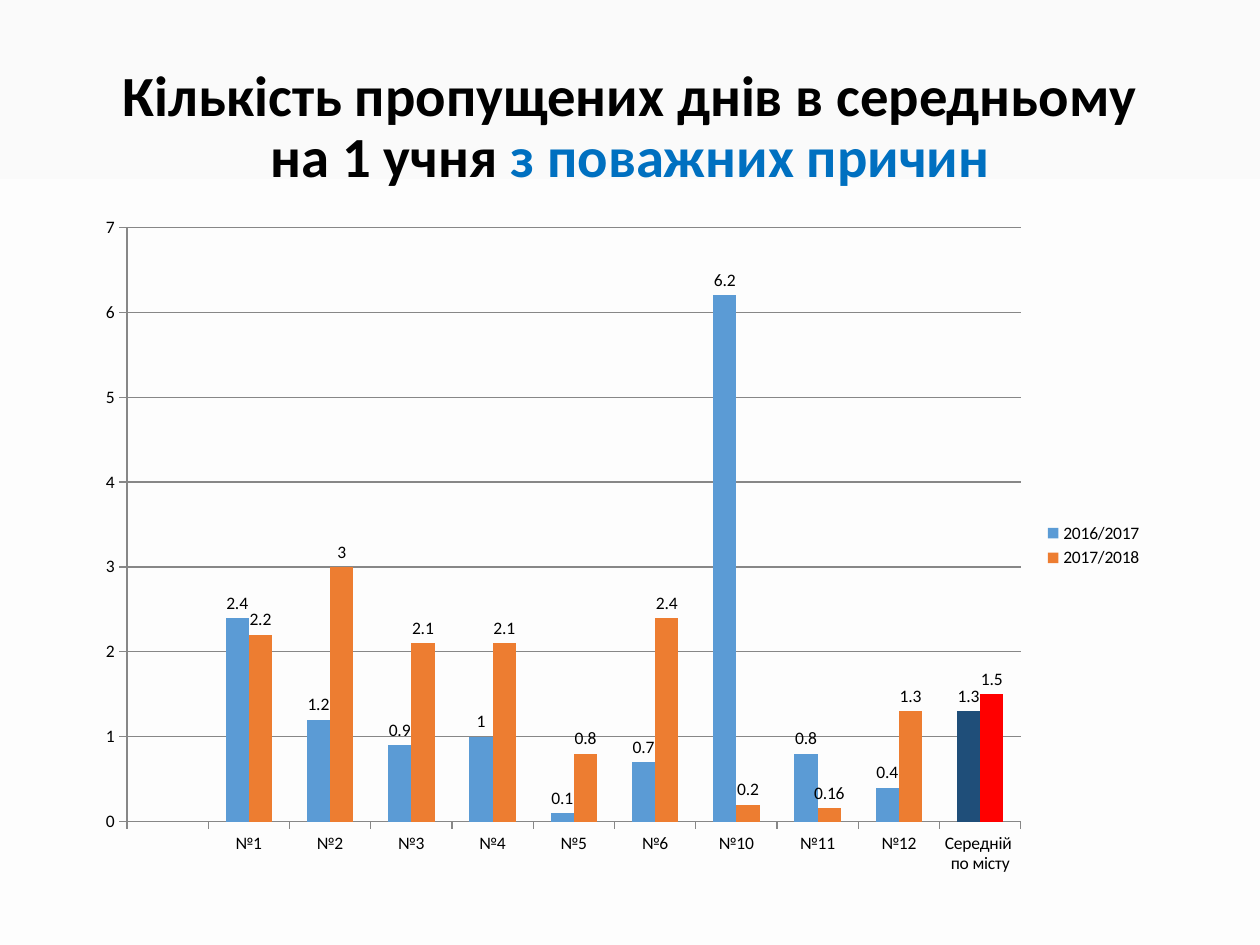
"""Build a slide charting days missed per pupil for valid reasons, by school."""
from lxml import etree
from pptx import Presentation
from pptx.chart.data import CategoryChartData
from pptx.dml.color import RGBColor
from pptx.enum.chart import XL_CHART_TYPE, XL_LABEL_POSITION, XL_LEGEND_POSITION, XL_TICK_MARK
from pptx.enum.shapes import MSO_SHAPE
from pptx.enum.text import MSO_ANCHOR, PP_ALIGN
from pptx.oxml.ns import qn
from pptx.util import Inches, Pt

CLUSTERED = XL_CHART_TYPE.COLUMN_CLUSTERED
OUTSIDE_END = XL_LABEL_POSITION.OUTSIDE_END
LEGEND_RIGHT = XL_LEGEND_POSITION.RIGHT
TICK_OUT = XL_TICK_MARK.OUTSIDE
RECTANGLE = MSO_SHAPE.RECTANGLE
MIDDLE = MSO_ANCHOR.MIDDLE
CENTER = PP_ALIGN.CENTER

FONT = "Calibri"
COLORS = {
    "background": "FAFAFA",
    "panel": "FFFFFF",
    "text": "000000",
    "accent": "0070C0",
    "grid": "878787",
}
SCHOOLS = ["", "№1", "№2", "№3", "№4", "№5", "№6", "№10", "№11", "№12", "Середній \nпо місту"]
YEARS = [
    ("2016/2017", [None, 2.4, 1.2, 0.9, 1, 0.1, 0.7, 6.2, 0.8, 0.4, 1.3], "5B9BD5", "1F4E79"),
    ("2017/2018", [None, 2.2, 3, 2.1, 2.1, 0.8, 2.4, 0.2, 0.16, 1.3, 1.5], "ED7D31", "FF0000"),
]
TITLE = [
    ("Кількість пропущених днів в середньому на 1 учня ", "text"),
    ("з поважних причин", "accent"),
]


def paint(fill, color):
    fill.solid()
    fill.fore_color.rgb = RGBColor.from_string(color)


prs = Presentation()
prs.slide_width, prs.slide_height = Inches(10), Inches(7.5)
slide = prs.slides.add_slide(prs.slide_layouts[6])
paint(slide.background.fill, COLORS["background"])

panel = slide.shapes.add_shape(RECTANGLE, 0, Inches(1.42), prs.slide_width, Inches(6.08))
panel.shadow.inherit = False
paint(panel.fill, COLORS["panel"])
panel.line.fill.background()
panel_color = panel.fill._xPr.find(qn("a:solidFill"))[0]
etree.SubElement(panel_color, qn("a:alpha"), val="77000")

heading = slide.shapes.add_textbox(Inches(0.69), Inches(0.4), Inches(8.62), Inches(1.45)).text_frame
heading.word_wrap = True
heading.vertical_anchor = MIDDLE
heading.margin_bottom = Inches(0.26)
heading_line = heading.paragraphs[0]
heading_line.alignment = CENTER
heading_line.line_spacing = 0.9
heading_line.font.name = FONT
heading_line.font.size = Pt(32.4)
heading_line.font.bold = True
for words, color in TITLE:
    run = heading_line.add_run()
    run.text = words
    run.font.color.rgb = RGBColor.from_string(COLORS[color])

absences = CategoryChartData()
absences.categories = SCHOOLS
for year, days, _, _ in YEARS:
    absences.add_series(year, days)
chart = slide.shapes.add_chart(
    CLUSTERED, Inches(0.67), Inches(1.62), Inches(8.5), Inches(5.42), absences
).chart
chart.has_title = False
chart.font.name = FONT
chart.font.size = Pt(10)
chart.font.color.rgb = RGBColor.from_string(COLORS["text"])
chart.has_legend = True
chart.legend.position = LEGEND_RIGHT
chart.legend.include_in_layout = False

days_axis = chart.value_axis
days_axis.minimum_scale, days_axis.maximum_scale, days_axis.major_unit = 0, 7, 1
days_axis.has_major_gridlines = True
chart.category_axis.has_major_gridlines = False
for axis in (chart.category_axis, days_axis):
    axis.major_tick_mark = TICK_OUT
for stroke in (chart.category_axis.format.line, days_axis.format.line, days_axis.major_gridlines.format.line):
    stroke.color.rgb = RGBColor.from_string(COLORS["grid"])
    stroke.width = Pt(0.75)

plot = chart.plots[0]
plot.gap_width = 150
plot.overlap = 0
plot.vary_by_categories = False
for series, (_, _, school_color, city_color) in zip(plot.series, YEARS):
    paint(series.format.fill, school_color)
    paint(series.points[len(SCHOOLS) - 1].format.fill, city_color)
    series.data_labels.show_value = True
    series.data_labels.position = OUTSIDE_END

prs.save("out.pptx")
